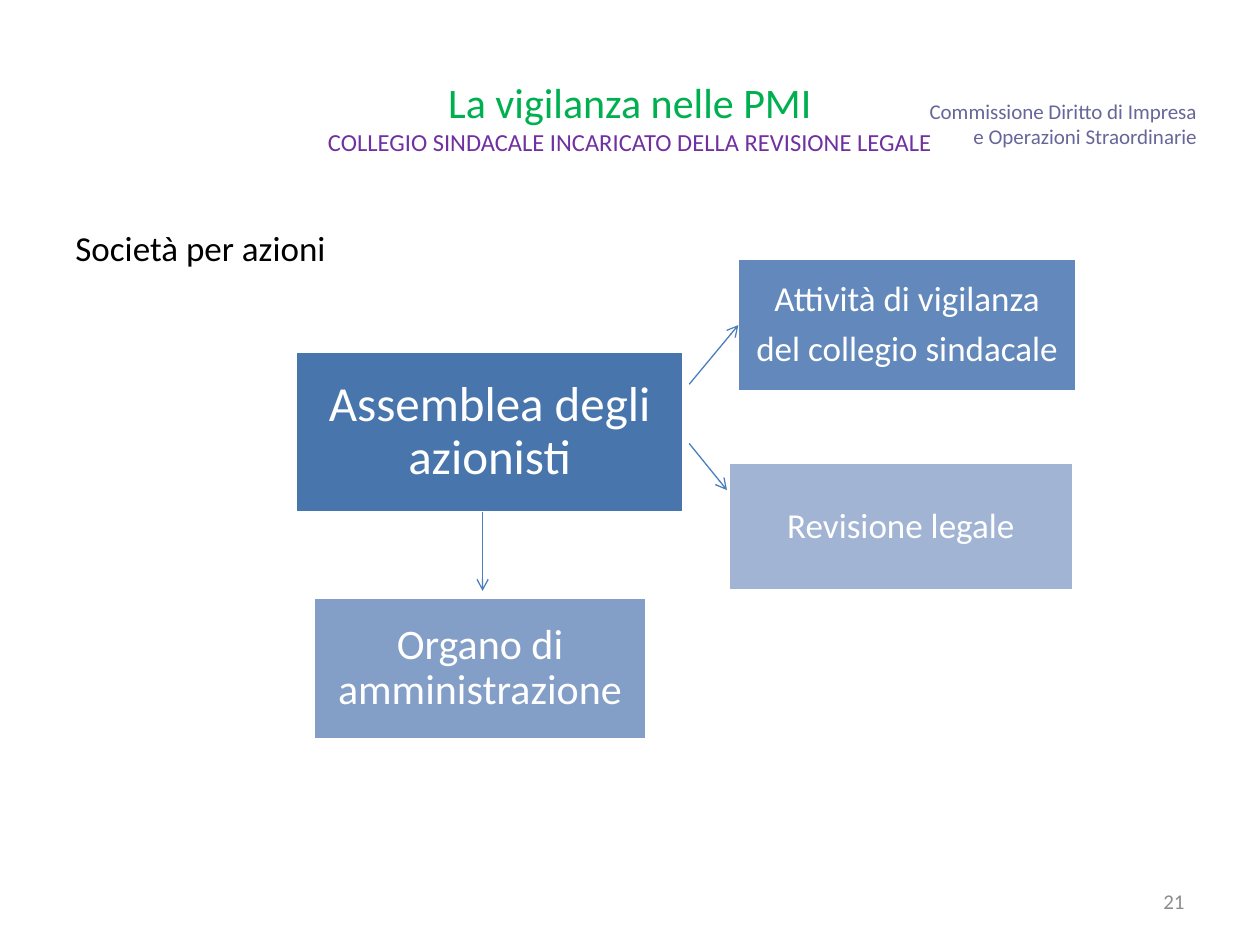
from dataclasses import dataclass

from lxml.etree import SubElement
from pptx import Presentation
from pptx.dml.color import RGBColor
from pptx.enum.shapes import MSO_CONNECTOR, MSO_SHAPE
from pptx.enum.text import MSO_ANCHOR, PP_ALIGN
from pptx.oxml.ns import qn
from pptx.shapes.base import BaseShape
from pptx.slide import Slide
from pptx.text.text import TextFrame
from pptx.util import Emu, Pt

EMU_PER_PX = 9144  # 100 px to the inch


@dataclass(frozen=True)
class Theme:
    font: str = "Calibri"
    title: str = "00B050"
    subtitle: str = "7030A0"
    header: str = "666699"
    body: str = "000000"
    muted: str = "8C8C8C"
    white: str = "FFFFFF"
    arrow: str = "4B7EBC"
    small_size: int = 12
    subtitle_size: int = 14
    body_size: int = 20
    title_size: int = 24
    root_size: int = 28
    box_line: float = 2
    arrow_line: float = 0.75


THEME = Theme()


@dataclass(frozen=True)
class Line:
    text: str
    size: int
    color: str


@dataclass(frozen=True)
class Label:
    area: tuple[int, int, int, int]
    lines: tuple[Line, ...]
    align: PP_ALIGN
    anchor: MSO_ANCHOR
    margins: tuple[int, int] = (10, 5)


@dataclass(frozen=True)
class Box:
    area: tuple[int, int, int, int]
    lines: tuple[str, ...]
    size: int
    fill: str
    margin: int


@dataclass(frozen=True)
class Arrow:
    start: tuple[int, int]
    end: tuple[int, int]


LABELS = (
    Label((643, 75, 307, 43),
          (Line("Commissione Diritto di Impresa", THEME.small_size, THEME.header),
           Line("e Operazioni Straordinarie", THEME.small_size, THEME.header)),
          PP_ALIGN.RIGHT, MSO_ANCHOR.BOTTOM, (0, 0)),
    Label((50, 30, 900, 125),
          (Line("La vigilanza nelle PMI", THEME.title_size, THEME.title),
           Line("COLLEGIO SINDACALE INCARICATO DELLA REVISIONE LEGALE",
                THEME.subtitle_size, THEME.subtitle)),
          PP_ALIGN.CENTER, MSO_ANCHOR.MIDDLE),
    Label((50, 175, 900, 495),
          (Line("Società per azioni", THEME.body_size, THEME.body),),
          PP_ALIGN.LEFT, MSO_ANCHOR.TOP),
    Label((717, 695, 233, 40),
          (Line("21", THEME.small_size, THEME.muted),),
          PP_ALIGN.RIGHT, MSO_ANCHOR.MIDDLE),
)

BOXES = (
    Box((234, 279, 309, 128), ("Assemblea degli azionisti",),
        THEME.root_size, "4875AC", 12),
    Box((585, 205, 270, 106), ("Attività di vigilanza", "del collegio sindacale"),
        THEME.body_size, "6389BC", 8),
    Box((249, 474, 264, 113), ("Organo di amministrazione",),
        THEME.title_size, "839EC7", 10),
    Box((578, 367, 274, 102), ("Revisione legale",),
        THEME.body_size, "A2B4D4", 8),
)

ARROWS = (
    Arrow((383, 406), (383, 469)),
    Arrow((547, 352), (577, 389)),
    Arrow((547, 305), (586, 258)),
)


def px(*lengths: int) -> list[Emu]:
    return [Emu(length * EMU_PER_PX) for length in lengths]


def set_all(target: object, values: dict[str, object]) -> None:
    for attribute, value in values.items():
        setattr(target, attribute, value)


def write_lines(frame: TextFrame, lines: tuple[Line, ...],
                paragraph_format: dict[str, object]) -> None:
    """Write each line as its own paragraph."""
    for index, line in enumerate(lines):
        paragraph = frame.add_paragraph() if index else frame.paragraphs[0]
        set_all(paragraph, paragraph_format)
        run = paragraph.add_run()
        run.text = line.text
        set_all(run.font, {"name": THEME.font, "size": Pt(line.size)})
        run.font.color.rgb = RGBColor.from_string(line.color)


def set_frame(shape: BaseShape, anchor: MSO_ANCHOR, side: int, top: int) -> TextFrame:
    """Set wrapping, anchor and margins of a shape's text."""
    frame = shape.text_frame
    across, down = px(side, top)
    set_all(frame, {
        "word_wrap": True, "vertical_anchor": anchor,
        "margin_left": across, "margin_right": across,
        "margin_top": down, "margin_bottom": down,
    })
    return frame


def draw_label(slide: Slide, label: Label) -> None:
    shape = slide.shapes.add_textbox(*px(*label.area))
    frame = set_frame(shape, label.anchor, *label.margins)
    write_lines(frame, label.lines, {"alignment": label.align})


def draw_box(slide: Slide, box: Box) -> None:
    shape = slide.shapes.add_shape(MSO_SHAPE.RECTANGLE, *px(*box.area))
    shape.shadow.inherit = False
    shape.fill.solid()
    shape.fill.fore_color.rgb = RGBColor.from_string(box.fill)
    shape.line.color.rgb = RGBColor.from_string(THEME.white)
    shape.line.width = Pt(THEME.box_line)
    frame = set_frame(shape, MSO_ANCHOR.MIDDLE, box.margin, box.margin)
    lines = tuple(Line(text, box.size, THEME.white) for text in box.lines)
    write_lines(frame, lines, {
        "alignment": PP_ALIGN.CENTER,
        "line_spacing": 0.9,
        "space_after": Pt(round(box.size * 0.35, 1)),
    })


def draw_arrow(slide: Slide, arrow: Arrow) -> None:
    connector = slide.shapes.add_connector(
        MSO_CONNECTOR.STRAIGHT, *px(*arrow.start, *arrow.end))
    connector.line.color.rgb = RGBColor.from_string(THEME.arrow)
    connector.line.width = Pt(THEME.arrow_line)
    SubElement(connector.line._get_or_add_ln(), qn("a:tailEnd"), type="arrow")
    SubElement(connector._element.spPr, qn("a:effectLst"))


def main() -> None:
    presentation = Presentation()
    width, height = px(1000, 750)
    set_all(presentation, {"slide_width": width, "slide_height": height})
    slide = presentation.slides.add_slide(presentation.slide_layouts[6])
    for label in LABELS:
        draw_label(slide, label)
    for box in BOXES:
        draw_box(slide, box)
    for arrow in ARROWS:
        draw_arrow(slide, arrow)
    presentation.save("out.pptx")


if __name__ == "__main__":
    main()
